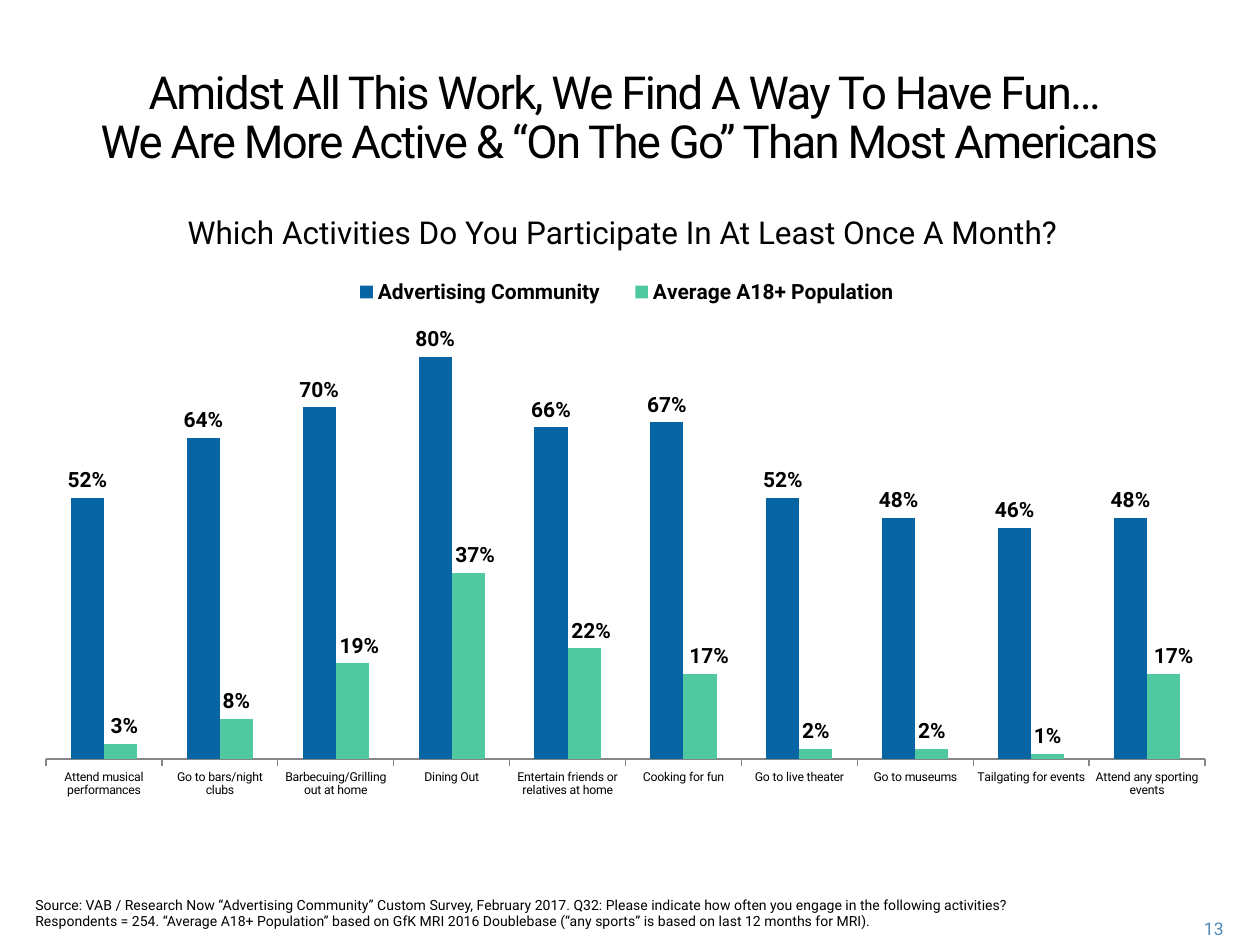
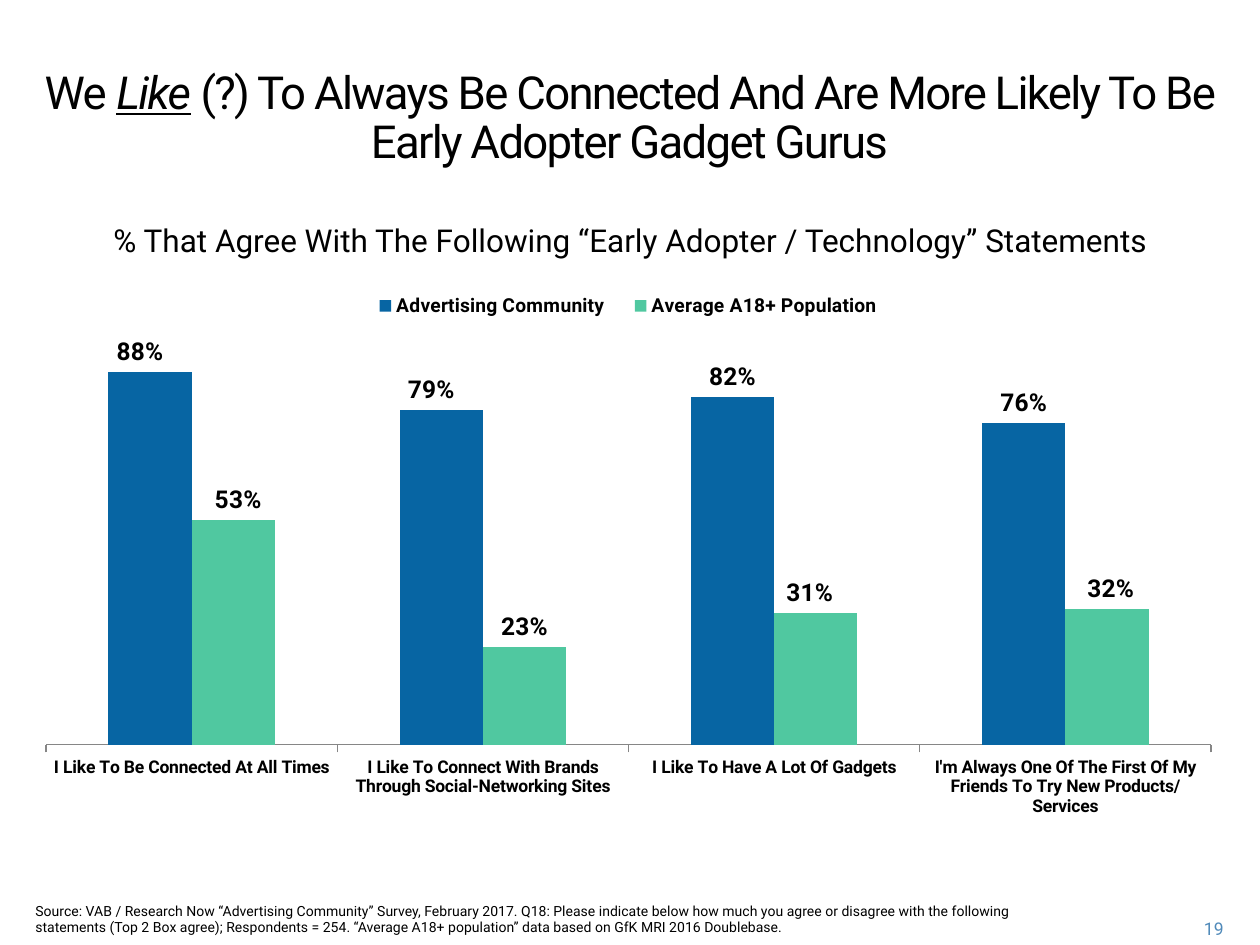
import pptx
import pptx.util
import pptx.chart.data
import pptx.dml.color
import pptx.enum.chart
import pptx.enum.text
import pptx.oxml
import pptx.oxml.ns

# Shared style
PX = 914400 / 126
SLIDE_SIZE = (1260, 945)
FONT = "Roboto"
BLACK = pptx.dml.color.RGBColor(0x00, 0x00, 0x00)
BLUE = pptx.dml.color.RGBColor(0x07, 0x65, 0xA3)
GREEN = pptx.dml.color.RGBColor(0x50, 0xC8, 0xA0)
PAGE_BLUE = pptx.dml.color.RGBColor(0x50, 0x8A, 0xBA)
AXIS_GRAY = pptx.dml.color.RGBColor(0x86, 0x86, 0x86)

ALIGN = pptx.enum.text.PP_ALIGN
TITLE_BOX = (23, 63, 1213, 176)
PAGE_BOX = (1159, 912, 77, 32)
TITLE_SPACING = "-100"
LABEL_FORMAT = "0%"
SERIES_COLORS = {"Advertising Community": BLUE, "Average A18+ Population": GREEN}
EMPHASIS = {"italic": True, "underline": True}

# Content: titles are lines of (text, format) runs; label shifts are
# {(series, category): px right}
SLIDES = [
    {
        "page": "13",
        "title": [
            [("Amidst All This Work, We Find A Way To Have Fun… ", {})],
            [("We Are More Active & “On The Go” Than Most Americans", {})],
        ],
        "question": "Which Activities Do You Participate In At Least Once A Month?",
        "question_box": (16, 207, 1213, 50),
        "source": "Source: VAB / Research Now “Advertising Community” Custom Survey, "
                  "February 2017. Q32: Please indicate how often you engage in the "
                  "following activities? Respondents = 254. “Average A18+ Population” "
                  "based on GfK MRI 2016 Doublebase (“any sports” is based on last 12 "
                  "months for MRI).",
        "source_box": (23, 890, 1033, 33),
        "rows": [
            ("Attend musical performances", 0.52, 0.03),
            ("Go to bars/night clubs", 0.64, 0.08),
            ("Barbecuing/Grilling out at home", 0.70, 0.19),
            ("Dining Out", 0.80, 0.37),
            ("Entertain friends or relatives at home", 0.66, 0.22),
            ("Cooking for fun", 0.67, 0.17),
            ("Go to live theater", 0.52, 0.02),
            ("Go to museums", 0.48, 0.02),
            ("Tailgating for events", 0.46, 0.01),
            ("Attend any sporting events", 0.48, 0.17),
        ],
        "chart_box": (23, 249, 1207, 560),
        "plot_box": (46, 307, 1159, 452),
        "legend_box": (332, 275, 590, 34),
        "axis_maximum": 0.9,
        "sizes": {"category": 7, "legend": 12, "label": 12},
        "category_bold": False,
        "label_shifts": {(1, 0): 4, (1, 2): 7, (1, 3): 7, (1, 4): 7,
                         (1, 5): 9, (1, 9): 10},
    },
    {
        "page": "19",
        "title": [[
            ("We ", {}),
            ("Like", EMPHASIS),
            (" (?) To Always Be Connected And Are More Likely To Be "
             "Early Adopter Gadget Gurus", {}),
        ]],
        "question": "% That Agree With The Following “Early Adopter / Technology” "
                    "Statements",
        "question_box": (24, 215, 1213, 50),
        "source": "Source: VAB / Research Now “Advertising Community” Survey, February "
                  "2017. Q18: Please indicate below how much you agree or disagree with "
                  "the following statements (Top 2 Box agree); Respondents = 254. "
                  "“Average A18+ population” data based on GfK MRI 2016 Doublebase.",
        "source_box": (23, 896, 1033, 49),
        "rows": [
            ("I Like To Be Connected At All Times", 0.88, 0.53),
            ("I Like To Connect With Brands Through Social-Networking Sites", 0.79, 0.23),
            ("I Like To Have A Lot Of Gadgets", 0.82, 0.31),
            ("I'm Always One Of The First Of My Friends To Try New Products/Services",
             0.76, 0.32),
        ],
        "chart_box": (23, 268, 1213, 560),
        "plot_box": (46, 321, 1165, 424),
        "legend_box": (356, 290, 545, 32),
        "axis_maximum": 1.0,
        "sizes": {"category": 10, "legend": 11, "label": 14},
        "category_bold": True,
        "label_shifts": {(0, 0): -10, (0, 1): -10, (1, 0): 5, (1, 2): -6, (1, 3): 4},
    },
]


def emu(box):
    return [pptx.util.Emu(round(length * PX)) for length in box]


def apply(target, values):
    for name, value in values.items():
        setattr(target, name, value)


def format_font(font, size, color=BLACK, **extra):
    apply(font, {"name": FONT, "size": pptx.util.Pt(size), **extra})
    font.color.rgb = color


def add_text(slide, box, text, size, align, color=BLACK):
    frame = slide.shapes.add_textbox(*emu(box)).text_frame
    frame.word_wrap = True
    paragraph = frame.paragraphs[0]
    paragraph.alignment = align
    run = paragraph.add_run()
    run.text = text
    format_font(run.font, size, color)


def fill_title(title, lines):
    apply(title, dict(zip(("left", "top", "width", "height"), emu(TITLE_BOX))))
    frame = title.text_frame
    apply(frame, {
        "word_wrap": True,
        "auto_size": pptx.enum.text.MSO_AUTO_SIZE.NONE,
        "vertical_anchor": pptx.enum.text.MSO_ANCHOR.TOP,
    })
    paragraph = frame.paragraphs[0]
    apply(paragraph, {"alignment": ALIGN.CENTER, "line_spacing": pptx.util.Pt(28)})
    for number, line in enumerate(lines):
        if number:
            paragraph.add_line_break()
        for text, emphasis in line:
            run = paragraph.add_run()
            run.text = text
            format_font(run.font, 26, **emphasis)
            run._r.get_or_add_rPr().set("spc", TITLE_SPACING)


# Chart parts placed by fractions of the chart box
def layout_element(**values):
    settings = "".join(f'<c:{tag} val="{value}"/>' for tag, value in values.items())
    return pptx.oxml.parse_xml(
        f'<c:layout {pptx.oxml.ns.nsdecls("c")}>'
        f"<c:manualLayout>{settings}</c:manualLayout></c:layout>")


def place_in_chart(element, box, chart_box, **target):
    for old in element.findall(pptx.oxml.ns.qn("c:layout")):
        element.remove(old)
    left, top, width, height = box
    chart_left, chart_top, chart_width, chart_height = chart_box
    layout = layout_element(
        **target, xMode="edge", yMode="edge",
        x=round((left - chart_left) / chart_width, 4),
        y=round((top - chart_top) / chart_height, 4),
        w=round(width / chart_width, 4), h=round(height / chart_height, 4))
    position = element.find(pptx.oxml.ns.qn("c:legendPos"))
    if position is None:
        element.insert(0, layout)
    else:
        position.addnext(layout)


def shift_label(series, category, fraction, size):
    label = series.points[category].data_label
    label.position = pptx.enum.chart.XL_LABEL_POSITION.OUTSIDE_END
    format_font(label.font, size, bold=True)
    index = series._element.xpath(f'c:dLbls/c:dLbl/c:idx[@val="{category}"]')[0]
    index.addnext(pptx.oxml.parse_xml(
        f'<c:numFmt {pptx.oxml.ns.nsdecls("c")} '
        f'formatCode="{LABEL_FORMAT}" sourceLinked="0"/>'))
    index.addnext(layout_element(x=round(fraction, 4), y=0))


def add_column_chart(slide, content):
    categories, *columns = zip(*content["rows"])
    data = pptx.chart.data.CategoryChartData(number_format=LABEL_FORMAT)
    data.categories = categories
    for name, values in zip(SERIES_COLORS, columns):
        data.add_series(name, values)
    chart_box, sizes = content["chart_box"], content["sizes"]
    chart = slide.shapes.add_chart(
        pptx.enum.chart.XL_CHART_TYPE.COLUMN_CLUSTERED, *emu(chart_box), data).chart
    format_font(chart.font, sizes["category"])
    apply(chart, {"has_title": False, "has_legend": True})

    # Legend and plot area
    apply(chart.legend, {"position": pptx.enum.chart.XL_LEGEND_POSITION.TOP,
                         "include_in_layout": False})
    format_font(chart.legend.font, sizes["legend"], bold=True)
    place_in_chart(chart.legend._element, content["legend_box"], chart_box)
    plot_area = chart._chartSpace.chart.plotArea
    place_in_chart(plot_area, content["plot_box"], chart_box, layoutTarget="inner")

    # Axes
    apply(chart.value_axis, {"visible": False, "has_major_gridlines": False,
                             "minimum_scale": 0,
                             "maximum_scale": content["axis_maximum"]})
    axis = chart.category_axis
    axis.major_tick_mark = pptx.enum.chart.XL_TICK_MARK.OUTSIDE
    axis.format.line.color.rgb = AXIS_GRAY
    format_font(axis.tick_labels.font, sizes["category"],
                bold=content["category_bold"])

    # Columns and their labels
    plot = chart.plots[0]
    apply(plot, {"gap_width": 150, "overlap": 0, "vary_by_categories": False})
    for series in plot.series:
        series.format.fill.solid()
        series.format.fill.fore_color.rgb = SERIES_COLORS[series.name]
        apply(series.data_labels, {
            "show_value": True,
            "number_format": LABEL_FORMAT,
            "number_format_is_linked": False,
            "position": pptx.enum.chart.XL_LABEL_POSITION.OUTSIDE_END,
        })
        format_font(series.data_labels.font, sizes["label"], bold=True)
    for (series_number, category), shift in content["label_shifts"].items():
        shift_label(plot.series[series_number], category,
                    shift / chart_box[2], sizes["label"])


def main():
    presentation = pptx.Presentation()
    presentation.slide_width, presentation.slide_height = emu(SLIDE_SIZE)
    title_only = presentation.slide_layouts[5]
    for content in SLIDES:
        slide = presentation.slides.add_slide(title_only)
        fill_title(slide.shapes.title, content["title"])
        add_column_chart(slide, content)
        add_text(slide, content["question_box"], content["question"], 18, ALIGN.CENTER)
        add_text(slide, content["source_box"], content["source"], 8, ALIGN.LEFT)
        add_text(slide, PAGE_BOX, content["page"], 10, ALIGN.RIGHT, PAGE_BLUE)
    presentation.save("out.pptx")


if __name__ == "__main__":
    main()
